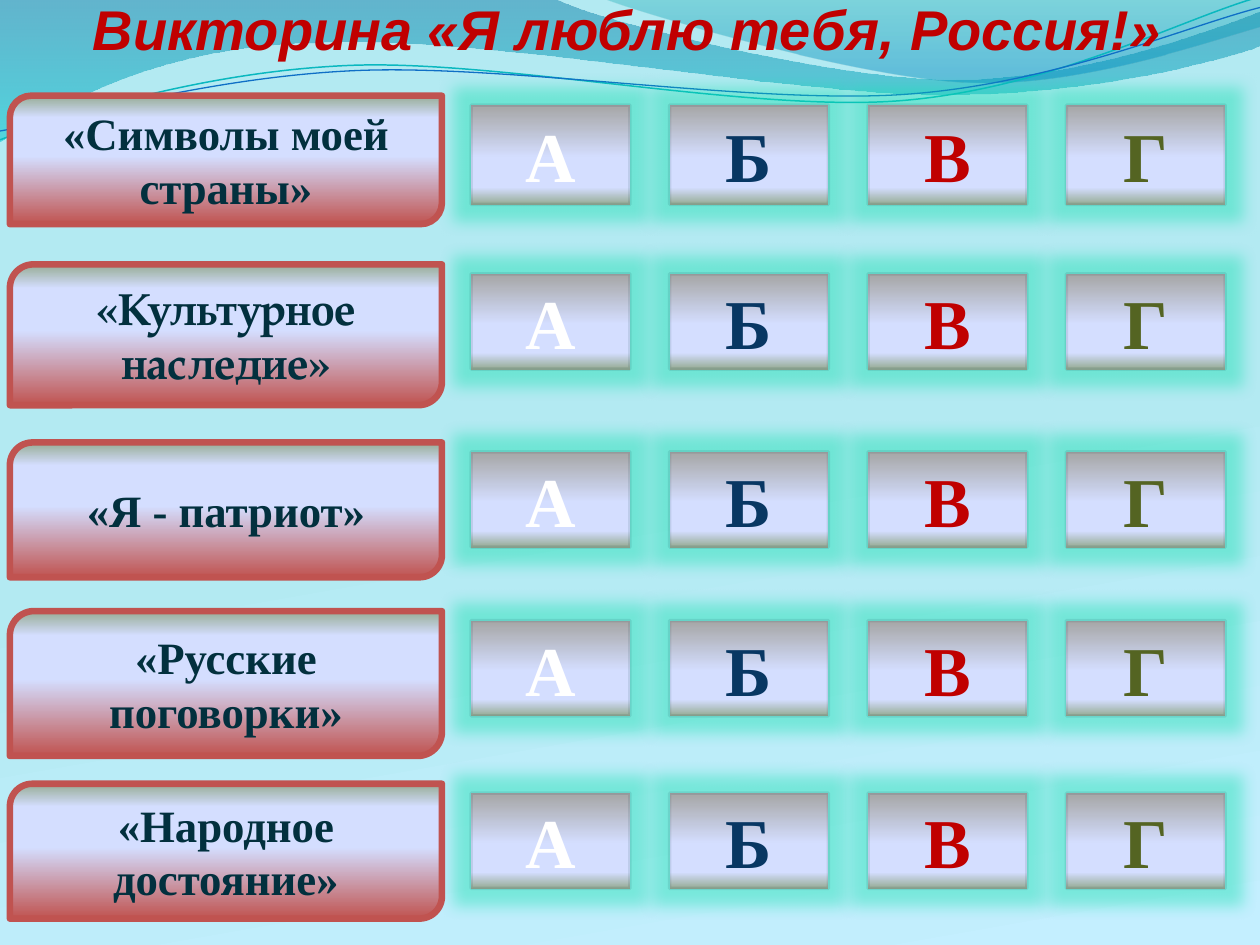
"""Builds a quiz board slide with five topics and four answer buttons each."""
import math
from typing import NamedTuple

import pptx
import pptx.dml.color
import pptx.enum.shapes
import pptx.enum.text
import pptx.oxml
import pptx.oxml.ns
import pptx.util
from lxml import etree

Cm, Pt = pptx.util.Cm, pptx.util.Pt
qn = pptx.oxml.ns.qn
MSO_SHAPE = pptx.enum.shapes.MSO_SHAPE
MSO_ANCHOR = pptx.enum.text.MSO_ANCHOR

COLORS = {
    "red": "C00000", "ink": "02303E", "white": "FFFFFF", "navy": "083763",
    "olive": "546422", "brick": "C05350", "lilac": "D4DEFF", "sage": "96AB94",
    "grey": "A6A6A6", "glow": "0CE0AC", "sky_top": "B3EAF2", "sky_bottom": "C4EFFF",
    "blue": "0074A1", "cyan": "00C6CF", "teal": "00A1A9", "azure": "008BBF",
    "teal_line": "0AB8BF", "blue_line": "0F6FC6",
}


class Stop(NamedTuple):
    pos: int
    color: str
    alpha: int = 100


class Topic(NamedTuple):
    text: str
    top: float
    height: float
    button_height: float = 1.92
    font: str = "Times New Roman"


class Wave(NamedTuple):
    start: tuple
    segments: list
    stops: tuple = ()
    line: str = ""
    width: float = 0
    center: tuple = (0, 0)
    tilt: float = 0


BUTTON_STOPS = (Stop(0, "grey"), Stop(53, "lilac"), Stop(83, "lilac"), Stop(100, "sage"))
LABEL_STOPS = (Stop(0, "brick"),) + BUTTON_STOPS[1:]
ANSWERS = {"А": "white", "Б": "navy", "В": "red", "Г": "olive"}
TOPICS = [
    Topic("«Символы моей страны»", 1.93, 2.59, 2),
    Topic("«Культурное наследие»", 5.33, 2.84, font="TeX Gyre Pagella"),
    Topic("«Я - патриот»", 8.92, 2.72),
    Topic("«Русские поговорки»", 12.32, 2.92),
    Topic("«Народное достояние»", 15.8, 2.72),
]
WAVES = [
    Wave((0, -0.01), [
        (4.4, -0.01), (4.76, 0.17, 6.64, 0.63, 7.58, 0.63),
        (8.53, 0.63, 9.58, 0.26, 10, 0.09), (10.01, 0.36),
        (9.83, 0.44, 8.7, 0.76, 7.46, 0.75), (6.22, 0.75, 3.82, 0.28, 2.57, 0.34),
        (1.29, 0.35, 0.46, 0.83, -0.01, 1.13), (0, -0.01),
    ], (Stop(0, "blue", 45), Stop(100, "cyan", 55))),
    Wave((4.79, -0.01), [
        (5.09, 0.11, 6.82, 0.62, 7.69, 0.65), (8.56, 0.69, 9.61, 0.32, 10, 0.21),
        (10, 0), (4.79, -0.01),
    ], (Stop(0, "teal", 30), Stop(80, "azure", 45))),
    Wave((0, 1.11), [
        (0.48, 0.93, 1.58, 0.57, 2.77, 0.52), (3.95, 0.47, 5.93, 0.89, 7.13, 0.8),
        (8.33, 0.71, 9.38, 0.15, 9.98, -0.02),
    ], line="teal_line", width=0.85, center=(4.99, 0.58), tilt=-2.7),
    Wave((0, 1.04), [
        (0.47, 0.96, 1.64, 0.61, 2.83, 0.56), (4.03, 0.51, 5.97, 0.83, 7.17, 0.75),
        (8.36, 0.67, 9.41, 0.21, 10, 0.06),
    ], line="blue_line", width=0.75, center=(5, 0.59), tilt=-2.7),
]


def rgb(name: str) -> pptx.dml.color.RGBColor:
    return pptx.dml.color.RGBColor.from_string(COLORS[name])


def set_alpha(color, percent: int) -> None:
    etree.SubElement(color, qn("a:alpha"), val=str(percent * 1000))


def set_gradient(fill, parent, stops: tuple, angle: int) -> None:
    fill.solid()
    grad = etree.Element(qn("a:gradFill"), rotWithShape="1")
    stop_list = etree.SubElement(grad, qn("a:gsLst"))
    for stop in stops:
        gs = etree.SubElement(stop_list, qn("a:gs"), pos=str(stop.pos * 1000))
        color = etree.SubElement(gs, qn("a:srgbClr"), val=COLORS[stop.color])
        if stop.alpha < 100:
            set_alpha(color, stop.alpha)
    etree.SubElement(grad, qn("a:lin"), ang=str(angle * 60000), scaled="0")
    parent.replace(parent.find(qn("a:solidFill")), grad)


def set_line(sp, color: str, width: float) -> None:
    sp.line.color.rgb = rgb(color)
    sp.line.width = Pt(width)


def write(sp, text: str, *, size: float, color: str, font: str = "Times New Roman",
          italic: bool = False, anchor=MSO_ANCHOR.MIDDLE) -> None:
    tf = sp.text_frame
    tf.word_wrap = True
    tf.vertical_anchor = anchor
    p = tf.paragraphs[0]
    p.alignment = pptx.enum.text.PP_ALIGN.CENTER
    r = p.add_run()
    r.text = text
    r.font.size, r.font.name = Pt(size), font
    r.font.bold, r.font.italic = True, italic
    r.font.color.rgb = rgb(color)


def level_points(wave: Wave) -> list:
    flat = list(wave.start) + [value for segment in wave.segments for value in segment]
    (cx, cy), angle = wave.center, math.radians(-wave.tilt)
    cos, sin = math.cos(angle), math.sin(angle)
    return [((cx + (x - cx) * cos - (y - cy) * sin) * 1000,
             (cy + (x - cx) * sin + (y - cy) * cos) * 1000)
            for x, y in zip(flat[::2], flat[1::2])]


def bend_segments(sp, segments: list) -> None:
    lines = iter(list(sp.element.iter(qn("a:lnTo"))))
    for segment in segments:
        line = next(lines)
        if len(segment) == 6:
            curve = etree.Element(qn("a:cubicBezTo"))
            line.getparent().replace(line, curve)
            curve.append(line[0])
            for control in (next(lines), next(lines)):
                curve.append(control[0])
                control.getparent().remove(control)


def draw_wave(s, wave: Wave) -> None:
    points = level_points(wave)
    builder = s.shapes.build_freeform(*points[0], scale=Cm(2.54) / 1000)
    builder.add_line_segments(points[1:], close=bool(wave.stops))
    sp = builder.convert_to_shape()
    bend_segments(sp, wave.segments)
    sp.rotation = wave.tilt
    sp.shadow.inherit = False
    if wave.stops:
        set_gradient(sp.fill, sp.element.spPr, wave.stops, 90)
        sp.line.fill.background()
    else:
        sp.fill.background()
        set_line(sp, wave.line, wave.width)


def add_panel(s, kind, left: float, top: float, width: float, height: float,
              stops: tuple, angle: int):
    sp = s.shapes.add_shape(kind, Cm(left), Cm(top), Cm(width), Cm(height))
    sp.shadow.inherit = False
    set_gradient(sp.fill, sp.element.spPr, stops, angle)
    return sp


def draw_button(s, column: int, letter: str, color: str, topic: Topic) -> None:
    sp = add_panel(s, MSO_SHAPE.ACTION_BUTTON_CUSTOM, 9.5 + 4 * column, topic.top + 0.19,
                   3.2, topic.button_height, BUTTON_STOPS, 90)
    set_line(sp, "ink", 2)
    spPr = sp.element.spPr
    set_alpha(spPr.find(qn("a:ln")).find(".//" + qn("a:srgbClr")), 10)
    glow = etree.SubElement(spPr.find(qn("a:effectLst")), qn("a:glow"), rad=str(Pt(18)))
    set_alpha(etree.SubElement(glow, qn("a:srgbClr"), val=COLORS["glow"]), 40)
    write(sp, letter, size=40, color=color)


def draw_topic(s, topic: Topic) -> None:
    for column, (letter, color) in enumerate(ANSWERS.items()):
        draw_button(s, column, letter, color, topic)
    sp = add_panel(s, MSO_SHAPE.ROUND_2_DIAG_RECTANGLE, 0.2, topic.top, 8.71, topic.height,
                   LABEL_STOPS, 270)
    set_line(sp, "brick", 3.75)
    write(sp, topic.text, size=25.6, color="ink", font=topic.font)


def main() -> None:
    prs = pptx.Presentation()
    prs.slide_width, prs.slide_height = Cm(25.4), Cm(19.05)
    s = prs.slides.add_slide(prs.slide_layouts[5])
    fill = s.background.fill
    fill.solid()
    set_gradient(fill, s.element.find(".//" + qn("p:bgPr")),
                 (Stop(50, "sky_top"), Stop(100, "sky_bottom")), 80)
    for wave in WAVES:
        draw_wave(s, wave)
    for topic in TOPICS:
        draw_topic(s, topic)
    title = s.shapes.title
    title.left, title.top, title.width, title.height = Cm(0.3), Cm(-0.23), Cm(24.69), Cm(1.63)
    write(title, "Викторина «Я люблю тебя, Россия!»", size=32, color="red", font="Arial",
          italic=True, anchor=MSO_ANCHOR.TOP)
    s.shapes.element.append(title.element)
    prs.save("out.pptx")


if __name__ == "__main__":
    main()
